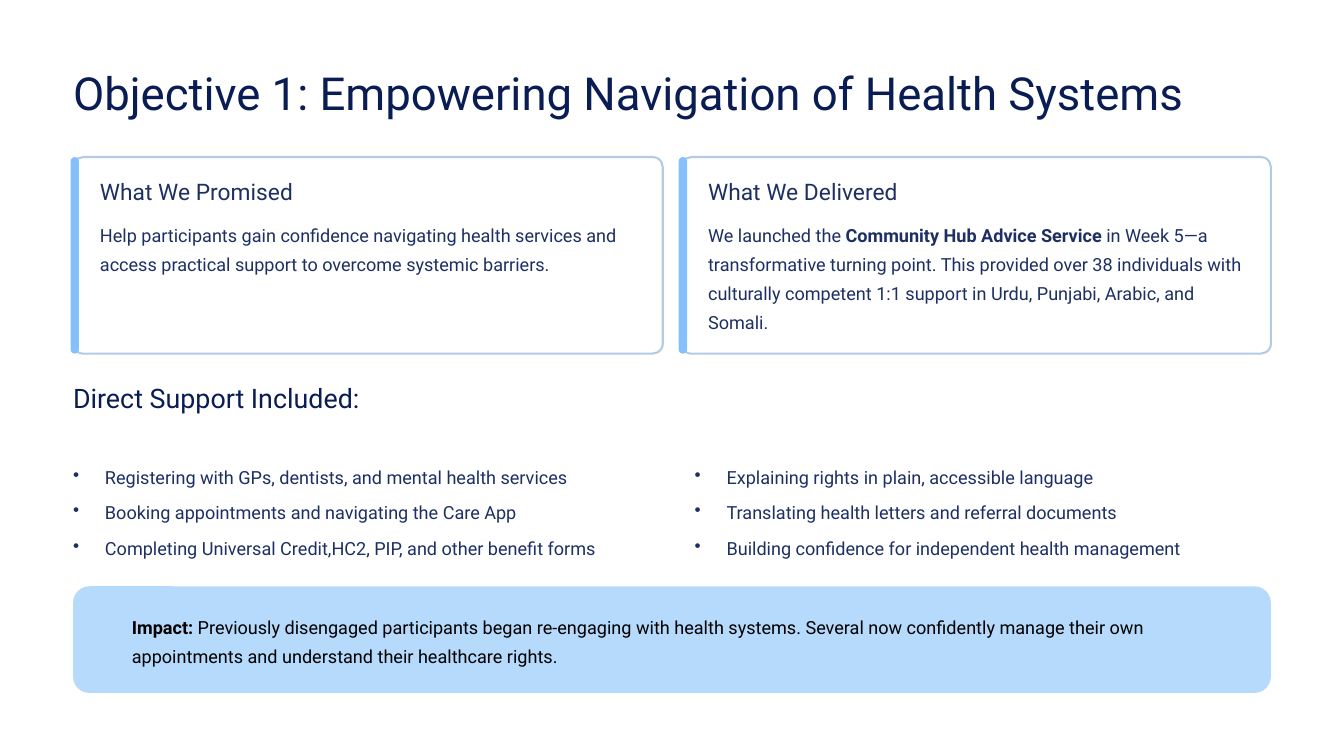
"""Build the slide on Objective 1 and its support."""
from lxml import etree
from pptx import Presentation
from pptx.dml.color import RGBColor
from pptx.enum.shapes import MSO_SHAPE
from pptx.oxml.ns import qn
from pptx.util import Inches, Pt

ROUND = MSO_SHAPE.ROUNDED_RECTANGLE
FONT = "Roboto"
NAVY, INK, BLACK = "091C53", "1E3063", "000000"
WHITE, EDGE, BAR, PALE = "FFFFFF", "B4CCE3", "84C1FA", "B5DAFC"
LEFT = 0.87
CARD_TOP, CARD_STEP = 1.87, 7.24
LIST_TOP, LIST_STEP = 5.46, 7.4

CARDS = [
    ("What We Promised", [
        ("Help participants gain confidence navigating health services and "
         "access practical support to overcome systemic barriers.", False)]),
    ("What We Delivered", [
        ("We launched the ", False),
        ("Community Hub Advice Service", True),
        (" in Week 5—a transformative turning point. This provided over 38 "
         "individuals with culturally competent 1:1 support in Urdu, Punjabi, "
         "Arabic, and Somali.", False)]),
]
LISTS = [
    ["Registering with GPs, dentists, and mental health services",
     "Booking appointments and navigating the Care App",
     "Completing Universal Credit,HC2, PIP, and other benefit forms"],
    ["Explaining rights in plain, accessible language",
     "Translating health letters and referral documents",
     "Building confidence for independent health management"],
]
IMPACT = [
    ("Impact:", True),
    (" Previously disengaged participants began re-engaging with health "
     "systems. Several now confidently manage their own appointments and "
     "understand their healthcare rights.", False),
]


def color(code):
    """Turn a hex string into a colour."""
    return RGBColor.from_string(code)


def add_box(slide, area, fill, curve, edge=None):
    """Draw a rounded box, with an outline if edge is given."""
    box = slide.shapes.add_shape(ROUND, *map(Inches, area))
    box.adjustments[0] = curve
    box.shadow.inherit = False
    box.fill.solid()
    box.fill.fore_color.rgb = color(fill)
    if edge:
        box.line.color.rgb = color(edge)
        box.line.width = Pt(1.8)
    else:
        box.line.fill.background()


def add_text(slide, area, paras, size=15.5, pitch=25, ink=INK):
    """Place paragraphs of (text, bold) runs and return them."""
    frame = slide.shapes.add_textbox(*map(Inches, area)).text_frame
    frame.word_wrap = True
    frame.margin_left = frame.margin_right = 0
    frame.margin_top = frame.margin_bottom = 0
    for num, runs in enumerate(paras):
        para = frame.add_paragraph() if num else frame.paragraphs[0]
        para.line_spacing = Pt(pitch)
        for words, bold in runs:
            run = para.add_run()
            run.text = words
            run.font.name = FONT
            run.font.size = Pt(size)
            run.font.bold = bold
            run.font.color.rgb = color(ink)
    return frame.paragraphs


def add_card(slide, left, title, body):
    """Draw a card with an accent bar, a title and a body."""
    add_box(slide, (left, CARD_TOP, 7.02, 2.34), WHITE, 0.051, EDGE)
    add_box(slide, (left - 0.03, CARD_TOP, 0.1, 2.34), BAR, 0.5)
    inner = left + 0.32
    add_text(slide, (inner, 2.11, 6.46, 0.34), [[(title, False)]], 19.5, 24)
    add_text(slide, (inner, 2.58, 6.46, 1.39), [body])


def add_list(slide, left, items):
    """Place a bulleted list with a hanging indent."""
    paras = add_text(slide, (left, LIST_TOP, 6.87, 1.2),
                     [[(item, False)] for item in items])
    for para in paras:
        para.space_after = Pt(5.6)
        props = para._p.get_or_add_pPr()
        props.set("marL", str(Inches(0.38)))
        props.set("indent", str(-Inches(0.38)))
        etree.SubElement(props, qn("a:buChar")).set("char", "•")


def main():
    """Build and save the slide."""
    deck = Presentation()
    deck.slide_width, deck.slide_height = Inches(16), Inches(9)
    slide = deck.slides.add_slide(deck.slide_layouts[6])
    add_text(slide, (LEFT, 0.75, 13.86, 0.68),
             [[("Objective 1: Empowering Navigation of Health Systems", False)]],
             39, 48.5, NAVY)
    for num, (title, body) in enumerate(CARDS):
        add_card(slide, LEFT + num * CARD_STEP, title, body)
    add_text(slide, (LEFT, 4.53, 3.76, 0.41),
             [[("Direct Support Included:", False)]], 23, 29, NAVY)
    for num, items in enumerate(LISTS):
        add_list(slide, LEFT + num * LIST_STEP, items)
    add_box(slide, (LEFT, 6.98, 14.26, 1.27), PALE, 0.154)
    add_text(slide, (1.57, 7.25, 13.34, 0.69), [IMPACT], ink=BLACK)
    deck.save("out.pptx")


if __name__ == "__main__":
    main()
